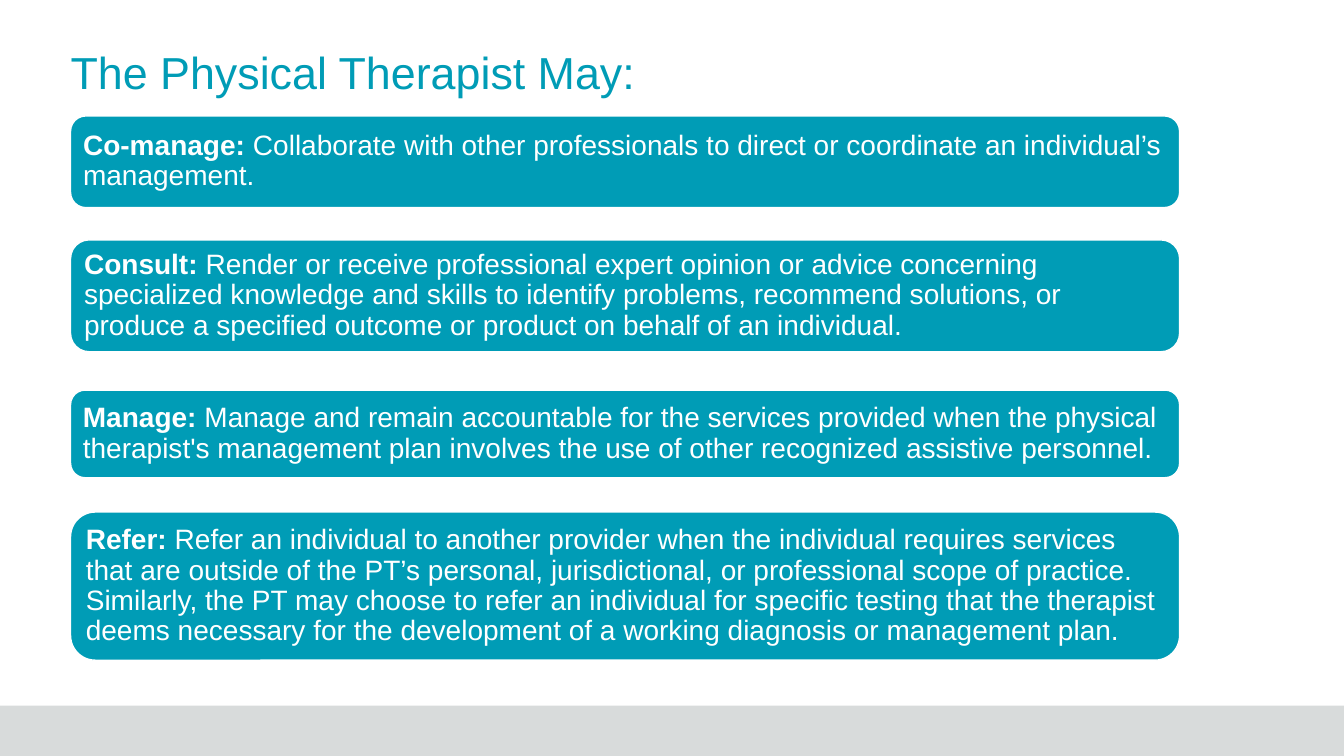
from pptx import Presentation
from pptx.dml.color import RGBColor
from pptx.enum import shapes, text
from pptx.util import Inches, Pt

COLORS = {"teal": "009CB6", "white": "FFFFFF", "footer": "D8DBDB"}
FONT = "Arial"
LEFT, WIDTH = 0.7, 11

# top, height, term, definition
ROLES = [
    (1.15, 0.91, "Co-manage:",
     " Collaborate with other professionals to direct or coordinate an "
     "individual’s management."),
    (2.38, 1.11, "Consult:",
     " Render or receive professional expert opinion or advice concerning "
     "specialized knowledge and skills to identify problems, recommend "
     "solutions, or produce a specified outcome or product on behalf of an "
     "individual."),
    (3.87, 0.87, "Manage:",
     " Manage and remain accountable for the services provided when the "
     "physical therapist's management plan involves the use of other "
     "recognized assistive personnel."),
    (5.08, 1.47, "Refer:",
     " Refer an individual to another provider when the individual requires "
     "services that are outside of the PT’s personal, jurisdictional, or "
     "professional scope of practice. Similarly, the PT may choose to refer "
     "an individual for specific testing that the therapist deems necessary "
     "for the development of a working diagnosis or management plan."),
]


def color(name):
    return RGBColor.from_string(COLORS[name])


def set_insets(frame, inset):
    frame.margin_left = frame.margin_right = Inches(inset)
    frame.margin_top = frame.margin_bottom = Inches(inset)
    frame.word_wrap = True


def style_paragraph(para, size, color_name):
    para.alignment = text.PP_ALIGN.LEFT
    para.line_spacing = 0.9
    para.font.name = FONT
    para.font.size = Pt(size)
    para.font.color.rgb = color(color_name)


def add_filled_shape(page, kind, fill, left, top, width, height):
    shape = page.shapes.add_shape(
        kind, Inches(left), Inches(top), Inches(width), Inches(height))
    shape.shadow.inherit = False
    shape.fill.solid()
    shape.fill.fore_color.rgb = color(fill)
    return shape


def add_footer(page, left, top, width, height):
    band = add_filled_shape(page, shapes.MSO_SHAPE.RECTANGLE, "footer",
                            left, top, width, height)
    band.line.fill.background()


def add_title(page, title, left, top, width, height):
    box = page.shapes.add_textbox(
        Inches(left), Inches(top), Inches(width), Inches(height))
    set_insets(box.text_frame, 0)
    para = box.text_frame.paragraphs[0]
    para.text = title
    style_paragraph(para, 32, "teal")


def add_role(page, term, definition, left, top, width, height):
    """Add a rounded panel with a bold term and its definition."""
    panel = add_filled_shape(page, shapes.MSO_SHAPE.ROUNDED_RECTANGLE, "teal",
                             left, top, width, height)
    panel.line.color.rgb = color("white")
    panel.line.width = Pt(1)
    frame = panel.text_frame
    set_insets(frame, 0.08)
    frame.vertical_anchor = text.MSO_ANCHOR.MIDDLE
    para = frame.paragraphs[0]
    style_paragraph(para, 20, "white")
    for words, bold in ((term, True), (definition, False)):
        span = para.add_run()
        span.text = words
        span.font.bold = bold


def main():
    deck = Presentation()
    deck.slide_width, deck.slide_height = Inches(13.33), Inches(7.5)
    page = deck.slides.add_slide(deck.slide_layouts[6])
    add_footer(page, 0, 7, 13.33, 0.5)
    add_title(page, "The Physical Therapist May:", LEFT, 0.5, WIDTH, 1)
    for top, height, term, definition in ROLES:
        add_role(page, term, definition, LEFT, top, WIDTH, height)
    deck.save("out.pptx")


if __name__ == "__main__":
    main()
